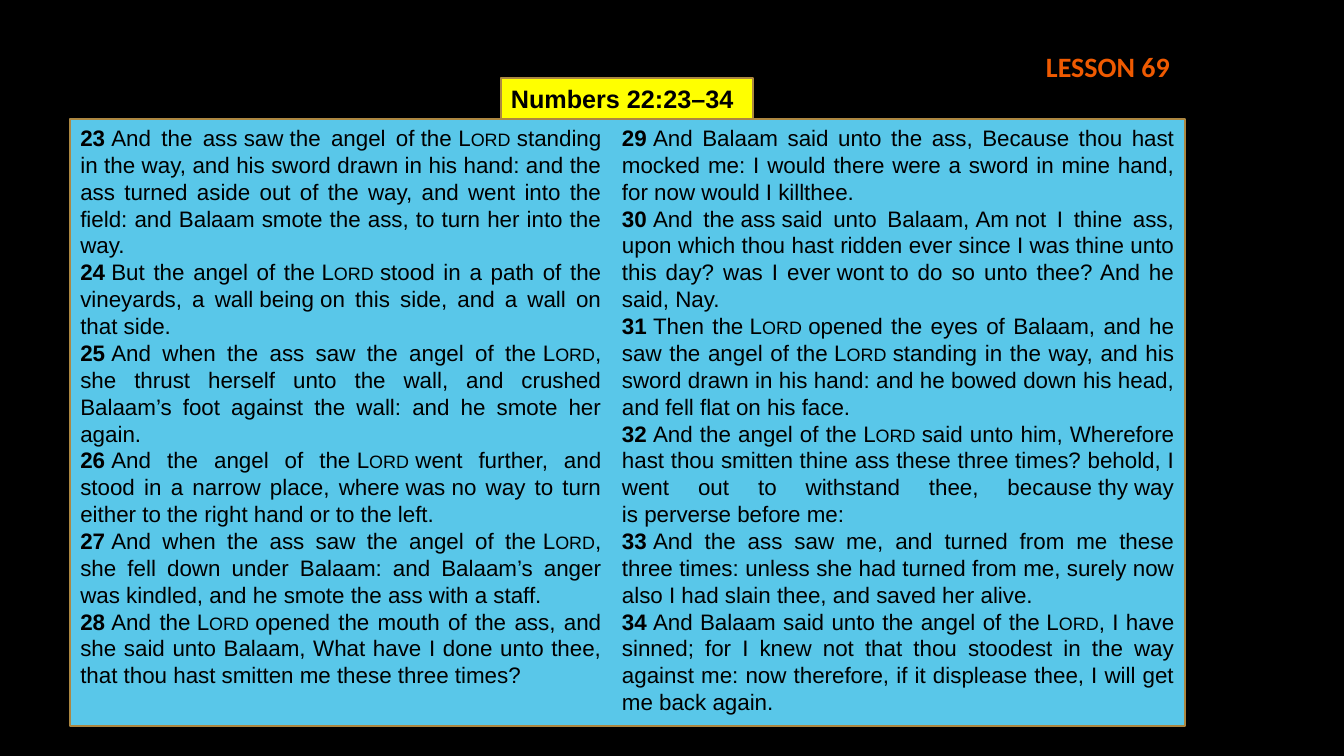
from pptx import Presentation
from pptx import util as u
from pptx.dml.color import RGBColor
from pptx.enum import shapes, text
from pptx.oxml.ns import qn
from lxml import etree

BLACK = RGBColor(0x00, 0x00, 0x00)
YELLOW = RGBColor(0xFF, 0xFF, 0x00)
BLUE = RGBColor(0x59, 0xC7, 0xE9)
BROWN = RGBColor(0xAC, 0x87, 0x41)
ORANGE = RGBColor(0xEF, 0x5A, 0x01)

TIE = "~"
HARD = chr(160)

LEFT = [
    ("23", "And the ass~saw~the angel of~the~Lord~standing in the way, and his sword drawn in his hand: and the ass turned aside out of the way, and went into the field: and Balaam smote the ass, to turn her into the way."),
    ("24", "But the angel of the~Lord~stood in a path of the vineyards, a wall~being~on this side, and a wall on that side."),
    ("25", "And when the ass saw the angel of the~Lord, she thrust herself unto the wall, and crushed Balaam’s foot against the wall: and he smote her again."),
    ("26", "And the angel of the~Lord~went further, and stood in a narrow place, where~was~no way to turn either to the right hand or to the left."),
    ("27", "And when the ass saw the angel of the~Lord, she fell down under Balaam: and Balaam’s anger was kindled, and he smote the ass with a staff."),
    ("28", "And the~Lord~opened the mouth of the ass, and she said unto Balaam, What have I done unto thee, that thou hast smitten me these three times?"),
]
RIGHT = [
    ("29", "And Balaam said unto the ass, Because thou hast mocked me: I would there were a sword in mine hand, for now would I~killthee."),
    ("30", "And the~ass~said unto Balaam,~Am~not I thine ass, upon which thou hast ridden ever since~I was~thine unto this day? was I ever~wont~to do so unto thee? And he said, Nay."),
    ("31", "Then the~Lord~opened the eyes of Balaam, and he saw the angel of the~Lord~standing in the way, and his sword drawn in his hand: and he bowed down his head, and fell flat on his face."),
    ("32", "And the angel of the~Lord~said unto him, Wherefore hast thou smitten thine ass these three times? behold, I went out to withstand thee, because~thy~way is~perverse~before me:"),
    ("33", "And the ass saw me, and turned from me these three times: unless she had turned from me, surely now also I had slain thee, and saved her alive."),
    ("34", "And Balaam said unto the angel of the~Lord, I have sinned; for I knew not that thou stoodest in the way against me: now therefore, if it displease thee, I will get me back again."),
]


def add_run(para, words, size, face="Arial", color=BLACK, bold=False):
    run = para.add_run()
    run.text = words.replace(TIE, HARD)
    font = run.font
    font.name, font.size, font.bold = face, u.Pt(size), bold
    font.color.rgb = color
    return run


def add_panel(slide, box, fill):
    panel = slide.shapes.add_shape(shapes.MSO_SHAPE.RECTANGLE, *map(u.Cm, box))
    panel.shadow.inherit = False
    panel.fill.solid()
    panel.fill.fore_color.rgb = fill
    panel.line.color.rgb = BROWN
    panel.line.width = u.Pt(1.25)


def place(slide, holder, box, wrap=True):
    slide.shapes.element.append(holder.element)
    holder.left, holder.top, holder.width, holder.height = map(u.Cm, box)
    frame = holder.text_frame
    frame.word_wrap = wrap
    frame.auto_size = text.MSO_AUTO_SIZE.NONE
    frame.vertical_anchor = text.MSO_ANCHOR.TOP
    return frame


def add_verse(para, number, words):
    props = para._p.get_or_add_pPr()
    props.set("marL", "0")
    props.set("indent", "0")
    etree.SubElement(props, qn("a:buNone"))
    para.alignment = text.PP_ALIGN.JUSTIFY
    para.space_before = u.Pt(0)
    para.line_spacing = 1.0
    add_run(para, number + TIE, 16, bold=True)
    for i, part in enumerate(words.split("Lord")):
        if i:
            name = add_run(para, "Lord", 16)
            name._r.get_or_add_rPr().set("cap", "small")
        add_run(para, part, 16)


def add_verses(slide, holder, box, verses):
    frame = place(slide, holder, box)
    for i, verse in enumerate(verses):
        para = frame.add_paragraph() if i else frame.paragraphs[0]
        add_verse(para, *verse)


def add_title(slide, box):
    para = place(slide, slide.shapes.title, box, wrap=False).paragraphs[0]
    para.alignment = text.PP_ALIGN.LEFT
    add_run(para, "Numbers 22:23–34" + TIE, 18, bold=True)


def add_label(slide, box):
    label = slide.shapes.add_textbox(*map(u.Cm, box))
    label.text_frame.word_wrap = True
    add_run(label.text_frame.paragraphs[0], "LESSON 69", 20, "Calibri", ORANGE, True)


def main():
    deck = Presentation()
    deck.slide_width, deck.slide_height = u.Cm(33.87), u.Cm(19.05)
    slide = deck.slides.add_slide(deck.slide_layouts[3])
    slide.background.fill.solid()
    slide.background.fill.fore_color.rgb = BLACK
    first, second = slide.placeholders[1], slide.placeholders[2]

    add_panel(slide, (12.62, 1.96, 6.35, 2.08), YELLOW)
    add_panel(slide, (1.77, 3, 28.09, 15.29), BLUE)
    add_label(slide, (26.11, 1.12, 5.23, 2.08))
    add_verses(slide, first, (1.77, 3, 13.64, 14.63), LEFT)
    add_verses(slide, second, (15.42, 3, 14.43, 15.29), RIGHT)
    add_title(slide, (12.62, 1.96, 6.35, 1.02))
    deck.save("out.pptx")


if __name__ == "__main__":
    main()
